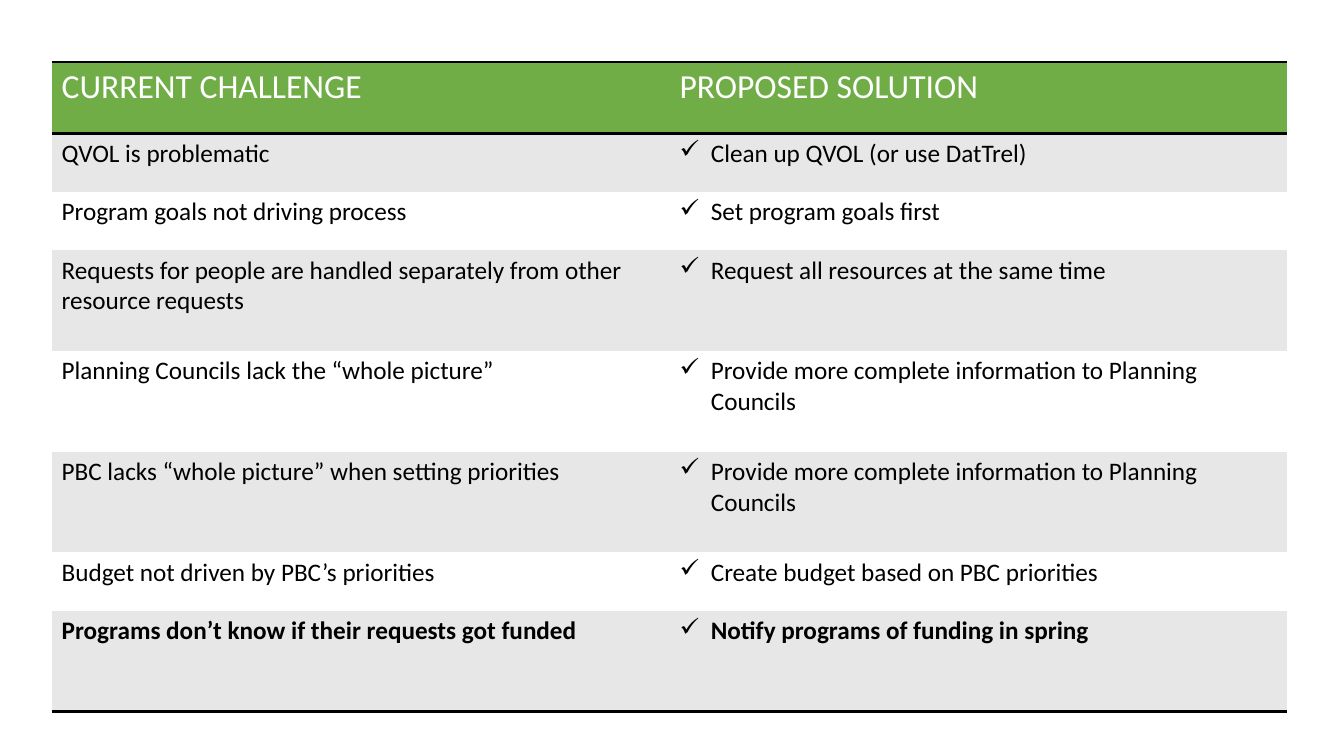
import pptx
import pptx.util
import pptx.dml.color
import pptx.oxml
import pptx.oxml.ns
from dataclasses import dataclass
from pptx.util import Cm


@dataclass(frozen=True)
class Theme:
    font: str = "Calibri"
    header_size: int = 24
    body_size: int = 18
    green: str = "70AD47"
    band: str = "E7E7E7"
    white: str = "FFFFFF"
    black: str = "000000"


theme = Theme()
rgb = pptx.dml.color.RGBColor.from_string
NS = pptx.oxml.ns.nsdecls("a")
NO_GRID_STYLE = "{2D5ABB26-0587-4C30-8999-92F81FD0307C}"


def add_borders(cell, sides):
    """Draw 2 pt black rules on the named sides, 'T' and/or 'B' in that order."""
    for i, side in enumerate(sides):
        line = pptx.oxml.parse_xml(
            f'<a:ln{side} {NS} w="{pptx.util.Pt(2)}"><a:solidFill>'
            f'<a:srgbClr val="{theme.black}"/></a:solidFill></a:ln{side}>')
        cell._tc.get_or_add_tcPr().insert(i, line)


def add_check_bullet(p):
    pPr = p._p.get_or_add_pPr()
    pPr.set("marL", str(Cm(0.79)))
    pPr.set("indent", str(-Cm(0.79)))
    pPr.append(pptx.oxml.parse_xml(f'<a:buChar {NS} char="✓"/>'))


short, tall = Cm(1.47), Cm(2.54)
rows = [
    (Cm(1.8), "CURRENT CHALLENGE", "PROPOSED SOLUTION"),
    (short, "QVOL is problematic", "Clean up QVOL (or use DatTrel)"),
    (short, "Program goals not driving process", "Set program goals first"),
    (tall, "Requests for people are handled separately from other resource requests",
     "Request all resources at the same time"),
    (tall, "Planning Councils lack the “whole picture”",
     "Provide more complete information to Planning Councils"),
    (tall, "PBC lacks “whole picture” when setting priorities",
     "Provide more complete information to Planning Councils"),
    (short, "Budget not driven by PBC’s priorities", "Create budget based on PBC priorities"),
    (tall, "Programs don’t know if their requests got funded",
     "Notify programs of funding in spring"),
]
last = len(rows) - 1

prs = pptx.Presentation()
prs.slide_width, prs.slide_height = Cm(33.87), Cm(19.05)
s = prs.slides.add_slide(prs.slide_layouts[6])

frame = s.shapes.add_table(len(rows), 2, Cm(1.3), Cm(1.56), Cm(31.14),
                           sum(row[0] for row in rows))
table = frame.table
table._tbl.tblPr.find(pptx.oxml.ns.qn("a:tableStyleId")).text = NO_GRID_STYLE

for r, (height, *texts) in enumerate(rows):
    table.rows[r].height = height
    header = r == 0
    fill = theme.green if header else theme.band if r % 2 else theme.white
    for c, text in enumerate(texts):
        cell = table.cell(r, c)
        cell.fill.solid()
        cell.fill.fore_color.rgb = rgb(fill)
        p = cell.text_frame.paragraphs[0]
        p.text = text
        font = p.runs[0].font
        font.name = theme.font
        font.size = pptx.util.Pt(theme.header_size if header else theme.body_size)
        font.color.rgb = rgb(theme.white if header else theme.black)
        font.bold = r == last
        if c == 1 and not header:
            add_check_bullet(p)
        if header:
            add_borders(cell, "TB")
        elif r == last:
            add_borders(cell, "B")

prs.save("out.pptx")
